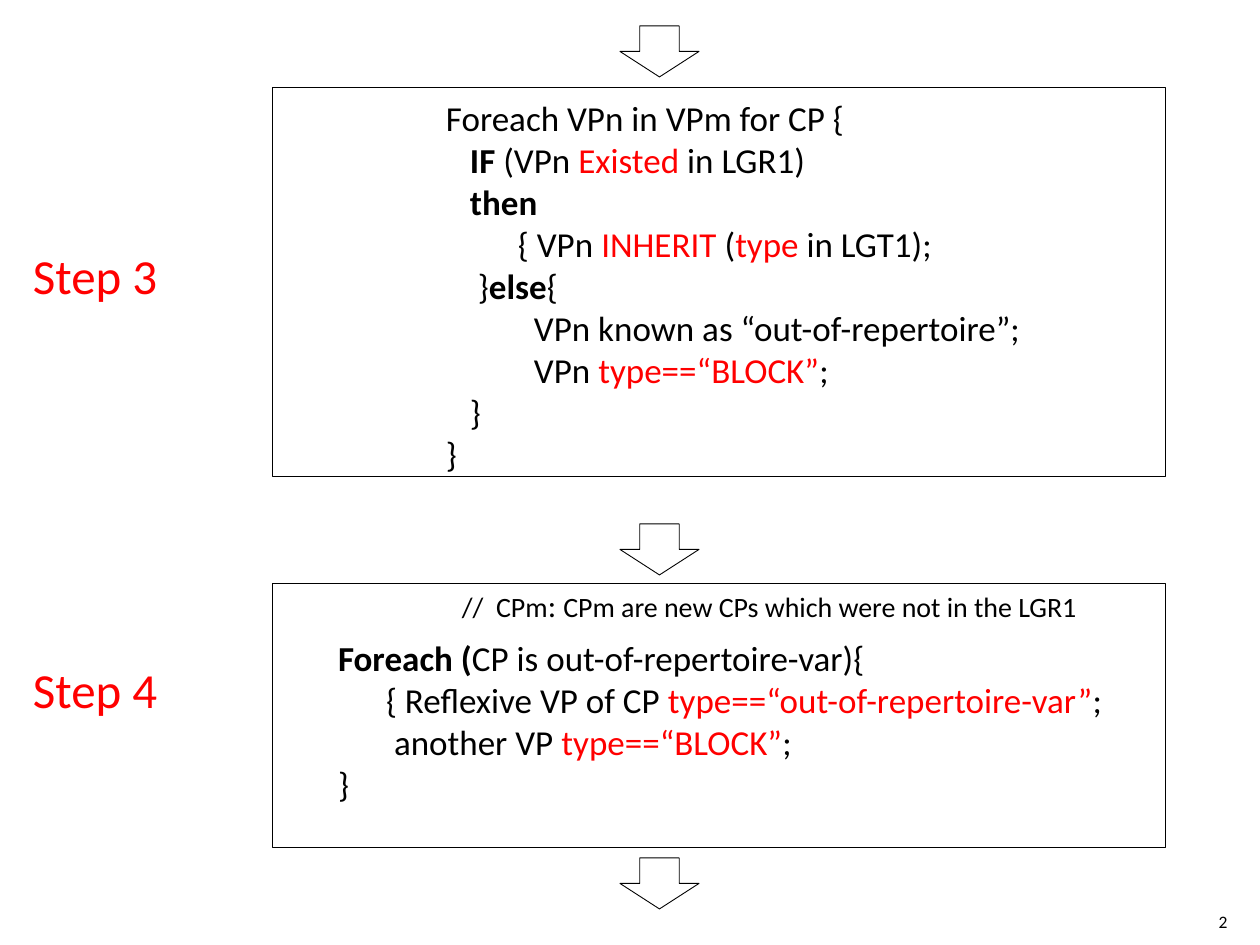
"""Build the slide with steps 3 and 4 of the variant-pair procedure."""
from pptx import Presentation
from pptx.dml.color import RGBColor
from pptx.enum.shapes import MSO_SHAPE
from pptx.enum.text import MSO_ANCHOR, PP_ALIGN
from pptx.util import Emu, Pt

RECT, ARROW = MSO_SHAPE.RECTANGLE, MSO_SHAPE.DOWN_ARROW
TOP, MIDDLE = MSO_ANCHOR.TOP, MSO_ANCHOR.MIDDLE
LEFT, CENTER = PP_ALIGN.LEFT, PP_ALIGN.CENTER
BLACK, RED = "000000", "FF0000"
FONT = "Calibri"
PX_PER_INCH = 126
INDENT = 8
INSET = 5

# Each line is (indent steps, runs); a run is (text, style), style "b" bold, "r" red.
STEP_3 = [
    (0, [("Foreach VPn in VPm for CP {", "")]),
    (3, [("IF", "b"), (" (VPn ", ""), ("Existed", "r"), (" in LGR1)", "")]),
    (3, [("then", "b")]),
    (9, [("{ VPn ", ""), ("INHERIT", "r"), (" (", ""), ("type", "r"), (" in LGT1);", "")]),
    (4, [("}", ""), ("else", "b"), ("{", "")]),
    (11, [("VPn known as “out-of-repertoire”;", "")]),
    (11, [("VPn ", ""), ("type==“BLOCK”", "r"), (";", "")]),
    (3, [("}", "")]),
    (0, [("}", "")]),
]
STEP_4 = [
    (0, [("Foreach (", "b"), ("CP is out-of-repertoire-var){", "")]),
    (6, [("{ Reflexive VP of CP ", ""), ("type==“out-of-repertoire-var”", "r"), (";", "")]),
    (7, [("another VP ", ""), ("type==“BLOCK”", "r"), (";", "")]),
    (0, [("}", "")]),
]
NOTE = [(0, [("//  CPm", ""), (": ", "", 18), ("CPm are new CPs which were not in the LGR1", "")])]

BOXES = [(273, 87, 893, 390), (273, 583, 893, 265)]
ARROW_TOPS = [26, 524, 858]
TEXTS = [
    ((441, 96, 590, 382), STEP_3, 20),
    ((333, 636, 789, 170), STEP_4, 20),
    ((457, 586, 633, 38), NOTE, 16),
    ((28, 246, 136, 59), [(0, [("Step 3", "r")])], 28),
    ((28, 660, 136, 59), [(0, [("Step 4", "r")])], 28),
]
PAGE_NUMBER = ((1196, 903, 54, 37), [(0, [("2", "")])], 10)


def px(n):
    return Emu(round(n * 914400 / PX_PER_INCH))


def rgb(value):
    return RGBColor.from_string(value)


def add_outline(s, kind, box):
    sp = s.shapes.add_shape(kind, *map(px, box))
    sp.shadow.inherit = False
    sp.fill.background()
    sp.line.color.rgb = rgb(BLACK)
    sp.line.width = Pt(0.5)


def add_text(s, box, lines, size, inset=INSET, anchor=TOP, align=LEFT):
    tf = s.shapes.add_textbox(*map(px, box)).text_frame
    tf.word_wrap = True
    tf.vertical_anchor = anchor
    tf.margin_left = tf.margin_right = px(inset)
    tf.margin_top = tf.margin_bottom = 0
    for i, (steps, runs) in enumerate(lines):
        p = tf.add_paragraph() if i else tf.paragraphs[0]
        p.alignment = align
        if steps:
            p._p.get_or_add_pPr().set("marL", str(px(steps * INDENT)))
        for text, style, *own_size in runs:
            r = p.add_run()
            r.text = text
            r.font.name = FONT
            r.font.size = Pt(own_size[0] if own_size else size)
            r.font.bold = style == "b"
            r.font.color.rgb = rgb(RED if style == "r" else BLACK)


def main():
    prs = Presentation()
    prs.slide_width, prs.slide_height = px(1260), px(945)
    s = prs.slides.add_slide(prs.slide_layouts[6])
    for box in BOXES:
        add_outline(s, RECT, box)
    for top in ARROW_TOPS:
        add_outline(s, ARROW, (620, top, 79, 51))
    for box, lines, size in TEXTS:
        add_text(s, box, lines, size)
    add_text(s, *PAGE_NUMBER, inset=0, anchor=MIDDLE, align=CENTER)
    prs.save("out.pptx")


if __name__ == "__main__":
    main()
